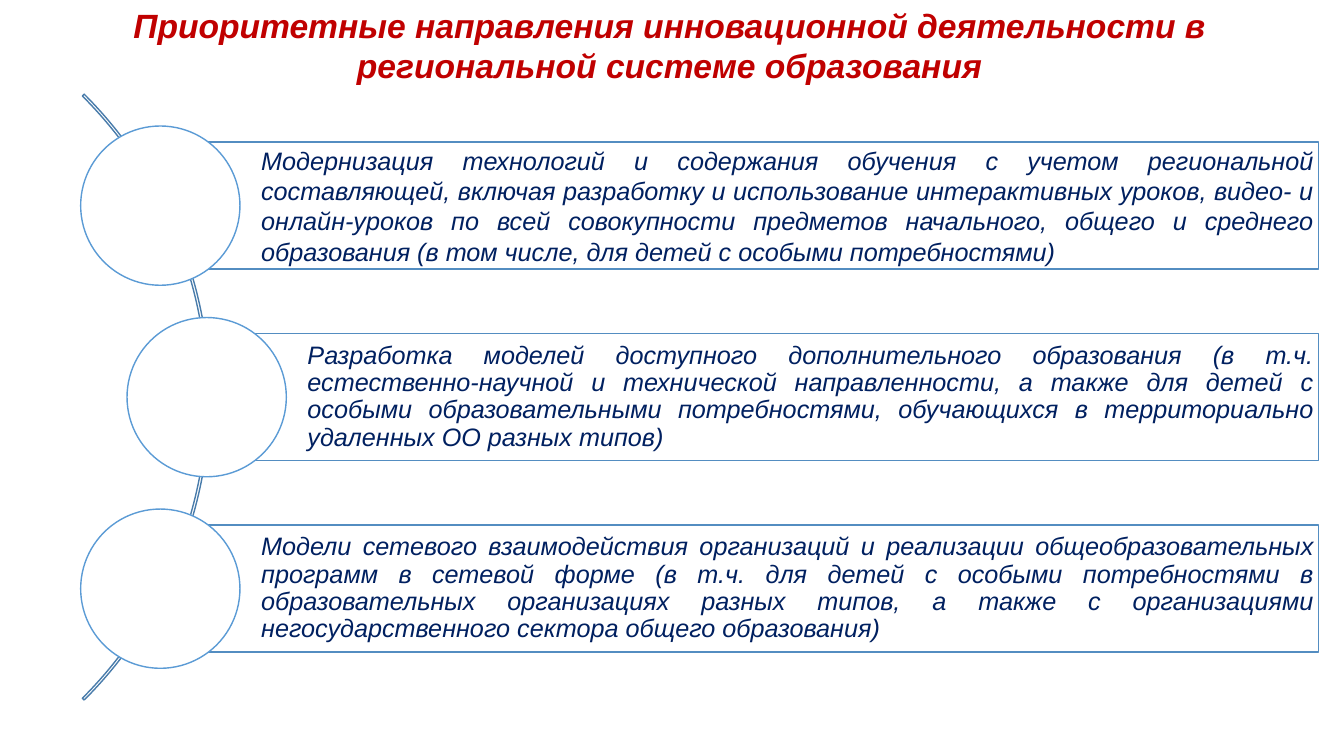
import dataclasses

import pptx
import pptx.dml.color
import pptx.enum.shapes
import pptx.enum.text
import pptx.util

Inches = pptx.util.Inches
Shapes = pptx.enum.shapes.MSO_SHAPE
Align = pptx.enum.text.PP_ALIGN
Anchor = pptx.enum.text.MSO_ANCHOR


@dataclasses.dataclass(frozen=True)
class Theme:
    font: str = "Arial"
    title_size: int = 24
    direction_size: int = 18
    title_color: str = "C00000"
    direction_color: str = "002060"
    arc_line: str = "497CAB"
    panel_line: str = "538DC1"
    circle_line: str = "5B9BD5"
    fill: str = "FFFFFF"
    line_width: int = 1


class SlideBuilder:
    def __init__(self, slide, theme):
        self.slide = slide
        self.theme = theme

    def color(self, value):
        return pptx.dml.color.RGBColor.from_string(value)

    def set_text(self, frame, text, size, color, align, bold=False, spacing=None):
        frame.text = text
        frame.word_wrap = True
        paragraph = frame.paragraphs[0]
        paragraph.alignment = align
        paragraph.line_spacing = spacing
        font = paragraph.runs[0].font
        font.name = self.theme.font
        font.size = pptx.util.Pt(size)
        font.bold = bold
        font.italic = True
        font.color.rgb = self.color(color)

    def title(self, text, left, top, width, height):
        heading = self.slide.shapes.title
        heading.left, heading.top = Inches(left), Inches(top)
        heading.width, heading.height = Inches(width), Inches(height)
        frame = heading.text_frame
        frame.vertical_anchor = Anchor.TOP
        frame.auto_size = pptx.enum.text.MSO_AUTO_SIZE.NONE
        self.set_text(frame, text, self.theme.title_size, self.theme.title_color,
                      Align.CENTER, bold=True)

    def outline(self, kind, left, top, width, height, line, filled=True):
        shape = self.slide.shapes.add_shape(
            kind, Inches(left), Inches(top), Inches(width), Inches(height))
        shape.shadow.inherit = False
        if filled:
            shape.fill.solid()
            shape.fill.fore_color.rgb = self.color(self.theme.fill)
        else:
            shape.fill.background()
        shape.line.color.rgb = self.color(line)
        shape.line.width = pptx.util.Pt(self.theme.line_width)
        return shape

    def arc(self, center_x, center_y, diameter):
        arc = self.outline(Shapes.BLOCK_ARC, center_x - diameter / 2,
                           center_y - diameter / 2, diameter, diameter,
                           self.theme.arc_line, filled=False)
        # Start and end angles of 315 and 45 degrees, then the thickness
        for index, value in enumerate((189, 27, 0.003)):
            arc.adjustments[index] = value

    def panel(self, text, left, center_y, right, height, spacing):
        panel = self.outline(Shapes.RECTANGLE, left, center_y - height / 2,
                             right - left, height, self.theme.panel_line)
        frame = panel.text_frame
        frame.vertical_anchor = Anchor.MIDDLE
        frame.margin_left = Inches(1)
        frame.margin_top = frame.margin_right = frame.margin_bottom = Inches(0.05)
        self.set_text(frame, text, self.theme.direction_size,
                      self.theme.direction_color, Align.JUSTIFY, spacing=spacing)

    def circle(self, center_x, center_y, diameter):
        self.outline(Shapes.OVAL, center_x - diameter / 2, center_y - diameter / 2,
                     diameter, diameter, self.theme.circle_line)


# Circle centre, line spacing and wording of each direction
DIRECTIONS = [
    (1.59, 1.0,
     "Модернизация технологий и содержания обучения с учетом региональной "
     "составляющей, включая разработку и использование интерактивных уроков, "
     "видео- и онлайн-уроков по всей совокупности предметов начального, общего "
     "и среднего образования (в том числе, для детей с особыми потребностями)"),
    (2.05, 0.9,
     "Разработка моделей доступного дополнительного образования (в т.ч. "
     "естественно-научной и технической направленности, а также для детей с "
     "особыми образовательными потребностями, обучающихся в территориально "
     "удаленных ОО разных типов)"),
    (1.59, 0.9,
     "Модели сетевого взаимодействия организаций и реализации "
     "общеобразовательных программ в сетевой форме (в т.ч. для детей с особыми "
     "потребностями в образовательных организациях разных типов, а также с "
     "организациями негосударственного сектора общего образования)"),
]
MIDDLE_Y = 3.94
ROW_PITCH = 1.9


def main():
    presentation = pptx.Presentation()
    presentation.slide_width = Inches(13.33)
    presentation.slide_height = Inches(7.5)
    title_only = presentation.slide_layouts[5]
    builder = SlideBuilder(presentation.slides.add_slide(title_only), Theme())

    # Heading
    builder.title("Приоритетные направления инновационной деятельности в "
                  "региональной системе образования", 0.23, 0, 12.82, 0.91)

    # Arc behind the directions
    builder.arc(-2.17, MIDDLE_Y, 8.5)

    # Directions along the arc
    for row, (center_x, spacing, text) in enumerate(DIRECTIONS):
        center_y = MIDDLE_Y + (row - 1) * ROW_PITCH
        builder.panel(text, center_x, center_y, 13.08, 1.26, spacing)
        builder.circle(center_x, center_y, 1.58)

    presentation.save("out.pptx")


if __name__ == "__main__":
    main()
